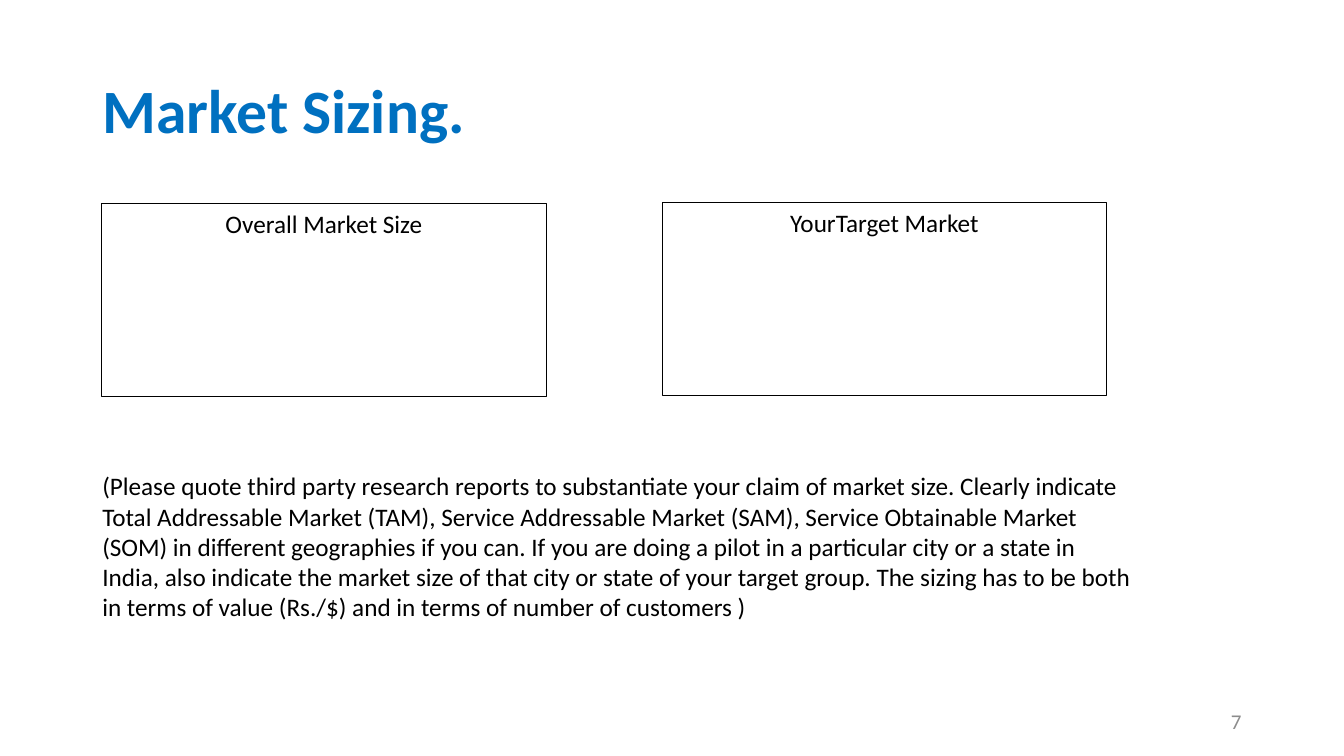
from dataclasses import dataclass

from pptx import Presentation
from pptx.dml.color import RGBColor
from pptx.enum import shapes, text
from pptx.util import Pt

BLUE = RGBColor(0x00, 0x70, 0xC0)
BLACK = RGBColor(0x00, 0x00, 0x00)
GREY = RGBColor(0x8C, 0x8C, 0x8C)
FONT = "Calibri"
LEFT = text.PP_ALIGN.LEFT
MID = text.PP_ALIGN.CENTER
RIGHT = text.PP_ALIGN.RIGHT
TOP = text.MSO_ANCHOR.TOP
CENTER = text.MSO_ANCHOR.MIDDLE


@dataclass(frozen=True)
class Area:
    left: float
    top: float
    width: float
    height: float

    def pts(self) -> tuple:
        return Pt(self.left), Pt(self.top), Pt(self.width), Pt(self.height)


@dataclass(frozen=True)
class Panel:
    label: str
    left: float
    top: float


PANELS = [
    Panel("Overall Market Size", 72.6, 145.4),
    Panel("YourTarget Market", 473, 144.6),
]
NOTE = (
    "(Please quote third party research reports to substantiate your claim of "
    "market size. Clearly indicate Total Addressable Market (TAM), Service "
    "Addressable Market (SAM), Service Obtainable Market (SOM) in different "
    "geographies if you can. If you are doing a pilot in a particular city or "
    "a state in India, also indicate the market size of that city or state of "
    "your target group. The sizing has to be both in terms of value (Rs./$) "
    "and in terms of number of customers )"
)


def write(shape, words: str, *, size: float = 18, color: RGBColor = BLACK,
          bold: bool = False, align=LEFT, anchor=TOP, space: float = 1) -> None:
    frame = shape.text_frame
    frame.word_wrap = True
    frame.auto_size = text.MSO_AUTO_SIZE.NONE
    frame.vertical_anchor = anchor
    para = frame.paragraphs[0]
    para.alignment = align
    para.line_spacing = space
    run = para.add_run()
    run.text = words
    font = run.font
    font.name, font.size, font.bold = FONT, Pt(size), bold
    font.color.rgb = color


def draw_panel(slide, panel: Panel) -> None:
    area = Area(panel.left, panel.top, 317.5, 138.2)
    box = slide.shapes.add_shape(shapes.MSO_SHAPE.RECTANGLE, *area.pts())
    box.shadow.inherit = False
    box.fill.background()
    box.line.color.rgb = BLACK
    box.line.width = Pt(0.75)
    write(box, panel.label, align=MID)


def main() -> None:
    deck = Presentation()
    deck.slide_width, deck.slide_height = Pt(960), Pt(540)
    slide = deck.slides.add_slide(deck.slide_layouts[5])

    # Title
    title = slide.shapes.title
    title.left, title.top, title.width, title.height = Area(66, 28.8, 828, 104.4).pts()
    write(title, "Market Sizing.", size=44, color=BLUE, bold=True,
          anchor=CENTER, space=0.9)

    # Market panels
    for panel in PANELS:
        draw_panel(slide, panel)

    # Page number
    page = slide.shapes.add_textbox(*Area(678, 500.5, 216, 28.8).pts())
    write(page, "7", size=15, color=GREY, align=RIGHT, anchor=CENTER)

    # Guidance note
    note = slide.shapes.add_textbox(*Area(66, 332.6, 751.7, 116.6).pts())
    write(note, NOTE)

    deck.save("out.pptx")


if __name__ == "__main__":
    main()
